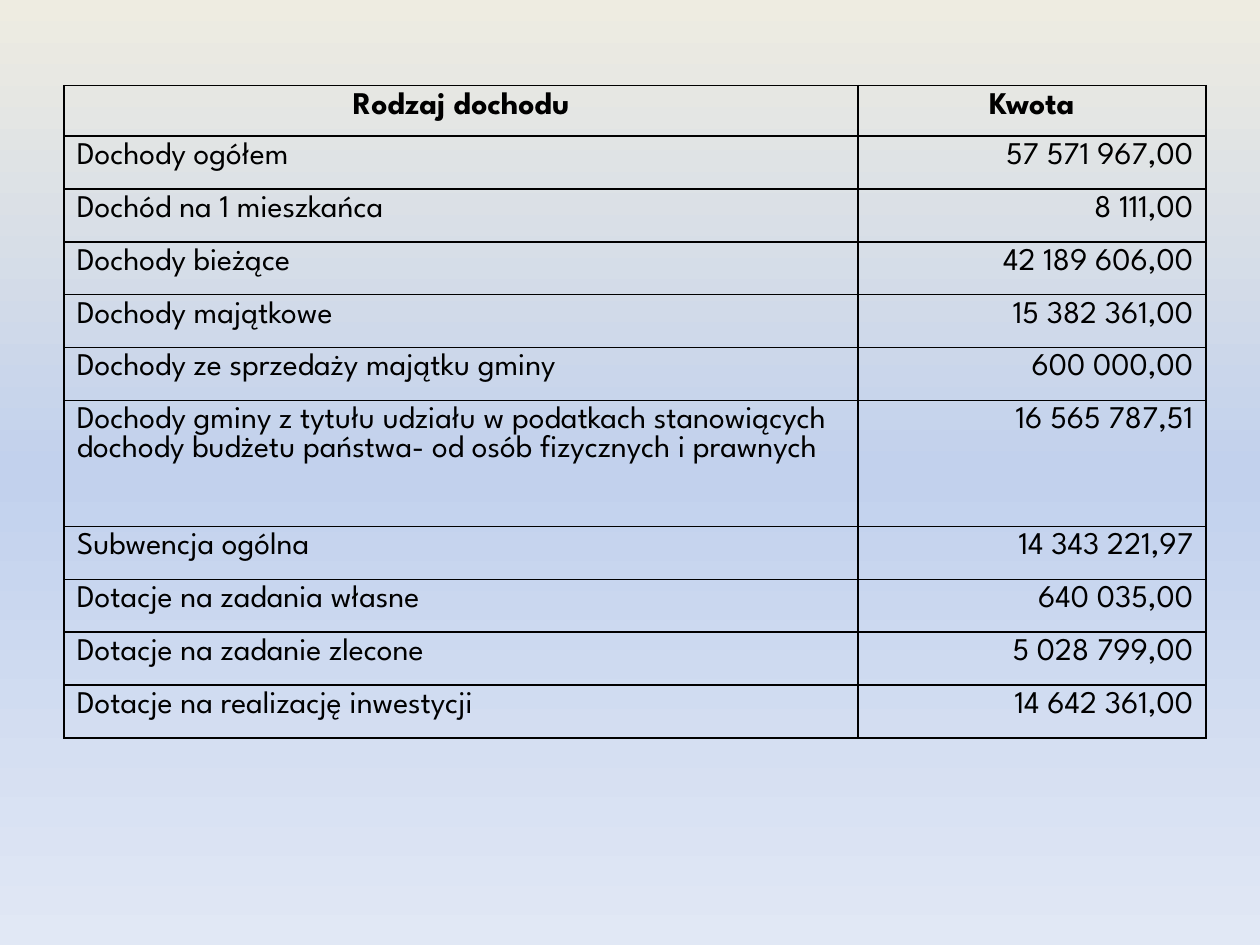
from copy import deepcopy
from dataclasses import dataclass

from pptx import Presentation
from pptx.dml.color import RGBColor
from pptx.enum.text import PP_ALIGN
from pptx.oxml.ns import qn
from pptx.oxml.xmlchemy import OxmlElement
from pptx.util import Inches, Pt

LEFT, MID, RIGHT = PP_ALIGN.LEFT, PP_ALIGN.CENTER, PP_ALIGN.RIGHT
BLANK = 6


@dataclass(frozen=True)
class Theme:
    face: str = "League Spartan"
    size: int = 18
    ink: str = "000000"
    line: int = 1
    sky: tuple = ((0, "EEECE1"), (0.5, "C2D1ED"), (1, "E1E8F5"))


THEME = Theme()
HEAD = ("Rodzaj dochodu", "Kwota")
INCOME = (
    ("Dochody ogółem", "57 571 967,00"),
    ("Dochód na 1 mieszkańca", "8 111,00"),
    ("Dochody bieżące", "42 189 606,00"),
    ("Dochody majątkowe", "15 382 361,00"),
    ("Dochody ze sprzedaży majątku gminy", "600 000,00"),
    ("Dochody gminy z tytułu udziału w podatkach stanowiących dochody "
     "budżetu państwa- od osób fizycznych i prawnych", "16 565 787,51"),
    ("Subwencja ogólna", "14 343 221,97"),
    ("Dotacje na zadania własne", "640 035,00"),
    ("Dotacje na zadanie zlecone", "5 028 799,00"),
    ("Dotacje na realizację inwestycji", "14 642 361,00"),
)
WIDTHS = (6.3, 2.76)
HEAD_H, ROW_H, TALL_H = 0.4, 0.42, 1.0
TALL_ROW = 6


def paint_sky(slide):
    """Fill the background with a gradient from top to bottom."""
    fill = slide.background.fill
    fill.gradient()
    fill.gradient_angle = 270
    stops = slide.element.find(".//" + qn("a:gsLst"))
    while len(stops) < len(THEME.sky):
        stops.append(deepcopy(stops[-1]))
    for stop, (place, tone) in zip(fill.gradient_stops, THEME.sky):
        stop.position = place
        stop.color.rgb = RGBColor.from_string(tone)


def add_edges(cell):
    """Draw a thin line on all four sides of a cell."""
    props = cell._tc.get_or_add_tcPr()
    for spot, side in enumerate(("a:lnL", "a:lnR", "a:lnT", "a:lnB")):
        edge = OxmlElement(side)
        edge.set("w", str(Pt(THEME.line)))
        fill = OxmlElement("a:solidFill")
        tone = OxmlElement("a:srgbClr")
        tone.set("val", THEME.ink)
        fill.append(tone)
        edge.append(fill)
        props.insert(spot, edge)


def fill_cell(cell, text, align, bold):
    cell.text = text
    cell.fill.background()
    para = cell.text_frame.paragraphs[0]
    para.alignment = align
    font = para.runs[0].font
    style = {"name": THEME.face, "size": Pt(THEME.size), "bold": bold}
    for key, value in style.items():
        setattr(font, key, value)
    font.color.rgb = RGBColor.from_string(THEME.ink)
    add_edges(cell)


def add_grid(slide):
    rows = (HEAD, *INCOME)
    highs = [HEAD_H] + [ROW_H] * len(INCOME)
    highs[TALL_ROW] = TALL_H
    grid = slide.shapes.add_table(
        len(rows), len(WIDTHS), Inches(0.51), Inches(0.68),
        Inches(sum(WIDTHS)), Inches(sum(highs))).table
    grid.horz_banding = False
    for col, width in zip(grid.columns, WIDTHS):
        col.width = Inches(width)
    for r, (row, high) in enumerate(zip(rows, highs)):
        grid.rows[r].height = Inches(high)
        aligns = (LEFT, RIGHT) if r else (MID, MID)
        for c, (text, align) in enumerate(zip(row, aligns)):
            fill_cell(grid.cell(r, c), text, align, bold=r == 0)


def main():
    deck = Presentation()
    deck.slide_width, deck.slide_height = Inches(10), Inches(7.5)
    slide = deck.slides.add_slide(deck.slide_layouts[BLANK])
    # Background
    paint_sky(slide)
    # Income table
    add_grid(slide)
    deck.save("out.pptx")


if __name__ == "__main__":
    main()
